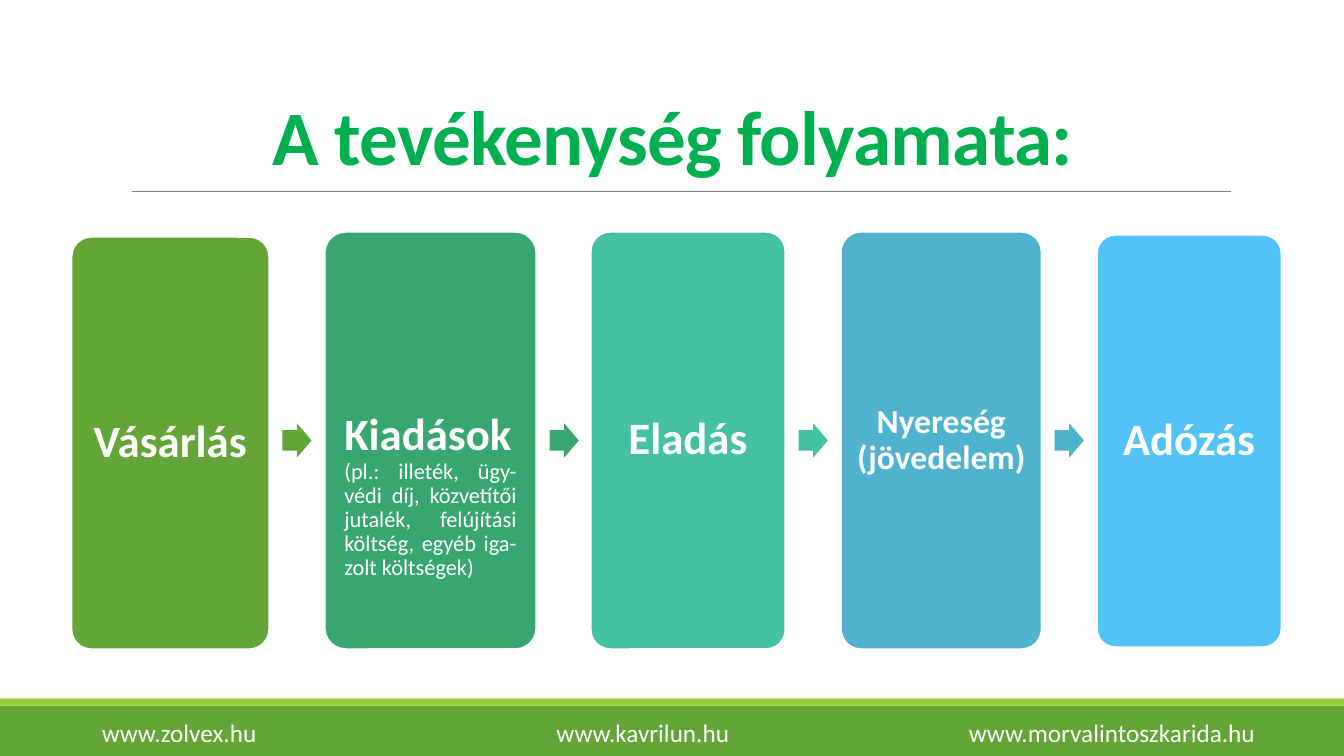
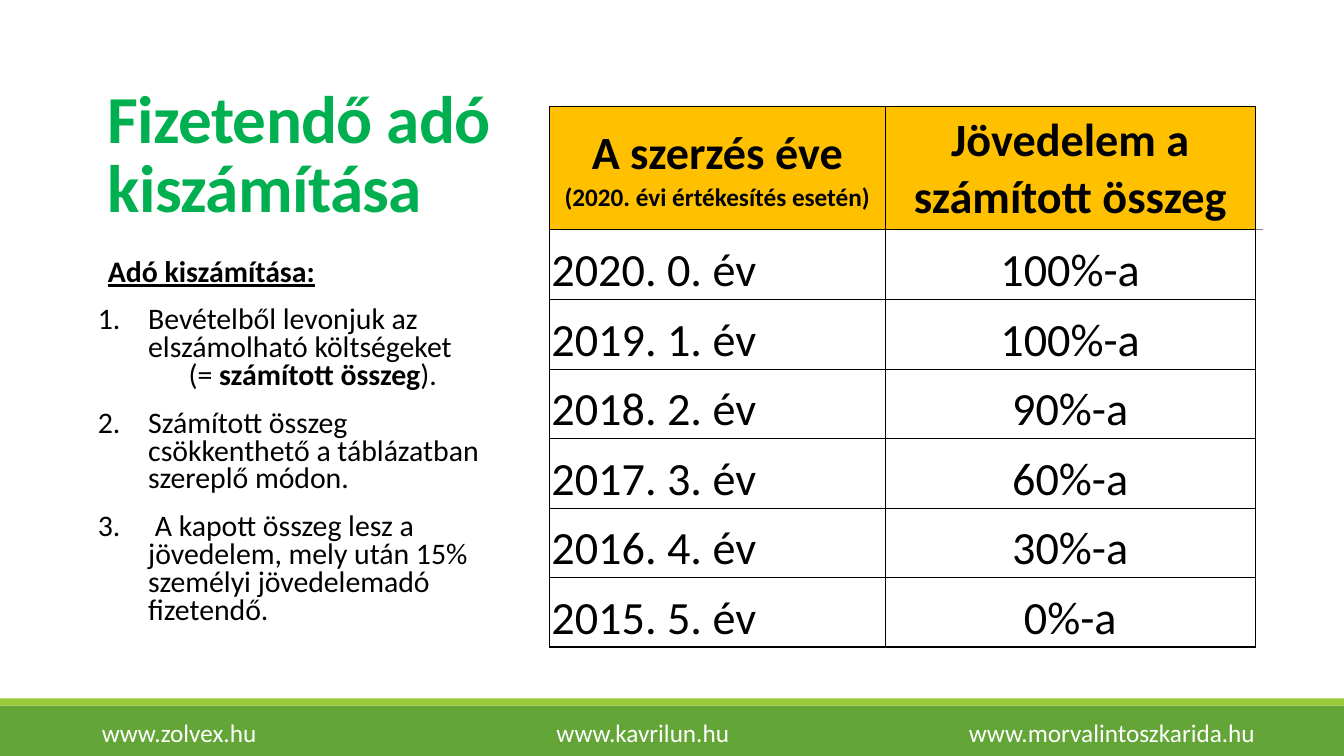
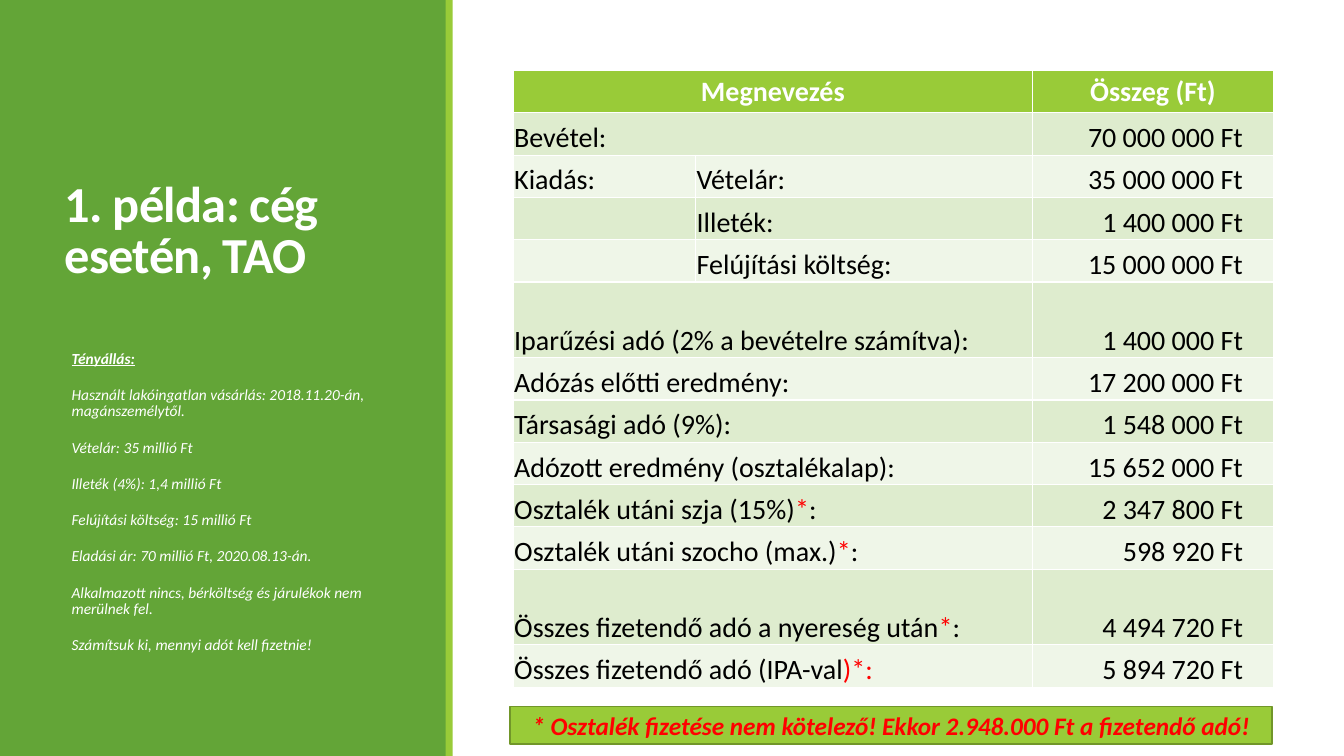
"""Build three slides on the taxation of property sales."""
from lxml import etree
from pptx import Presentation, util as u
from pptx.dml.color import RGBColor
from pptx.enum import shapes, text
from pptx.oxml import ns

GREEN, LIME, TITLE_GREEN, GREY = "63A537", "99CB38", "00B050", "808080"
WHITE, BLACK, RED, GOLD = "FFFFFF", "000000", "FF0000", "FFC000"
BANDS = ["DEECCE", "EFF6E8"]
RECT = shapes.MSO_SHAPE.RECTANGLE
LEFT, CENTER, RIGHT = text.PP_ALIGN.LEFT, text.PP_ALIGN.CENTER, text.PP_ALIGN.RIGHT
MIDDLE, BOTTOM = text.MSO_ANCHOR.MIDDLE, text.MSO_ANCHOR.BOTTOM


def block(page, kind, place, fill, line=None):
    """Add a flat preset shape at (left, top, width, height)."""
    box = page.shapes.add_shape(kind, *map(u.Inches, place))
    box.shadow.inherit = False
    box.fill.solid()
    box.fill.fore_color.rgb = RGBColor.from_string(fill)
    if line:
        box.line.color.rgb = RGBColor.from_string(line)
        box.line.width = u.Pt(1.25)
    else:
        box.line.fill.background()
    box.text_frame.word_wrap = True
    box.text_frame.vertical_anchor = MIDDLE
    return box


def write(para, words, size, colour=BLACK, bold=False, italic=False):
    """Append a formatted run to a paragraph."""
    span = para.add_run()
    span.text = words
    span.font.name = "Calibri"
    span.font.size = u.Pt(size)
    span.font.bold = bold
    span.font.italic = italic
    span.font.color.rgb = RGBColor.from_string(colour)
    return span


deck = Presentation()
deck.slide_width, deck.slide_height = u.Inches(13.33), u.Inches(7.5)

footer_bands = [((0, 7, 13.33, 0.5), GREEN), ((0, 6.93, 13.33, 0.07), LIME)]
side_bands = [((0, 0, 4.43, 7.5), GREEN), ((4.42, 0, 0.07, 7.5), LIME)]
outlines = [
    (5, "A tevékenység folyamata:", 55, TITLE_GREEN, CENTER,
     (1.17, 0.26, 11, 1.59), footer_bands, (1.31, 12.21, 1.9)),
    (1, "Fizetendő adó kiszámítása", 48, TITLE_GREEN, LEFT,
     (0.97, 0.7, 4.04, 1.59), footer_bands, (8.63, 12.53, 2.28)),
    (1, "1. példa: cég esetén, TAO", 36, WHITE, LEFT,
     (0.54, 0.57, 3.37, 2.3), side_bands, None),
]
addresses = "www.zolvex.hu\twww.kavrilun.hu\twww.morvalintoszkarida.hu"
for layout, heading, size, colour, align, place, bands, rule in outlines:
    page = deck.slides.add_slide(deck.slide_layouts[layout])
    for band, fill in bands:
        block(page, RECT, band, fill)
    if rule:
        start, end, height = map(u.Inches, rule)
        line = page.shapes.add_connector(shapes.MSO_CONNECTOR.STRAIGHT, start, height, end, height)
        line.line.color.rgb = RGBColor.from_string(GREY)
        line.line.width = u.Pt(0.5)
        etree.SubElement(line.element.spPr, ns.qn("a:effectLst"))
    if bands is footer_bands:
        footer = block(page, RECT, (0.5, 7.04, 12.53, 0.46), GREEN)
        footer.text_frame.margin_left = u.Inches(0.51)
        para = footer.text_frame.paragraphs[0]
        para.alignment = LEFT
        write(para, addresses, 18, WHITE)
        stops = etree.SubElement(para._p.get_or_add_pPr(), ns.qn("a:tabLst"))
        for stop in (4.51, 8.6):
            etree.SubElement(stops, ns.qn("a:tab"), pos=str(u.Inches(stop)), algn="l")
    for holder in list(page.placeholders):
        page.shapes.element.append(holder.element)
    title = page.shapes.title
    title.left, title.top, title.width, title.height = map(u.Inches, place)
    title.text_frame.auto_size = text.MSO_AUTO_SIZE.NONE
    title.text_frame.vertical_anchor = BOTTOM
    para = title.text_frame.paragraphs[0]
    para.alignment = align
    para.line_spacing = 0.85
    span = write(para, heading, size, colour, bold=True)
    span.font._element.set("spc", "-50")

process, rates, example = deck.slides

details = "(pl.: illeték, ügy- védi díj, közvetítői jutalék, felújítási költség, egyéb iga-zolt költségek)"
cards = [
    ("Vásárlás", 32, GREEN, (0.71, 2.35, 1.96, 4.09)),
    ("Kiadások", 32, "37A76F", (3.22, 2.3, 2.1, 4.14)),
    ("Eladás", 32, "44C1A3", (5.86, 2.3, 1.93, 4.14)),
    ("Nyereség (jövedelem)", 24, "4EB3CF", (8.34, 2.3, 1.99, 4.14)),
    ("Adózás", 32, "51C3F9", (10.88, 2.33, 1.83, 4.09)),
]
for label, size, fill, place in cards:
    card = block(process, shapes.MSO_SHAPE.ROUNDED_RECTANGLE, place, fill, WHITE)
    card.adjustments[0] = 0.1
    frame = card.text_frame
    frame.margin_left = frame.margin_right = u.Inches(size / 240)
    para = frame.paragraphs[0]
    para.alignment = CENTER
    para.line_spacing = 0.9
    write(para, label, size, WHITE, bold=True)
    if label == "Kiadások":
        frame.vertical_anchor = text.MSO_ANCHOR.TOP
        frame.margin_top = u.Inches(1.72)
        para.alignment = LEFT
        para = frame.add_paragraph()
        para.alignment = text.PP_ALIGN.JUSTIFY
        para.line_spacing = 0.9
        write(para, details, 16, WHITE)
    if label != "Adózás":
        arrow_left = place[0] + place[2] + 0.13
        arrow = block(process, shapes.MSO_SHAPE.RIGHT_ARROW, (arrow_left, 4.2, 0.29, 0.34), fill)
        arrow.adjustments[0] = 0.6

steps = [
    (None, 0.1, 12, 2, ["", "Adó kiszámítása:"]),
    (1, 0.5, 12, 0, ["Bevételből levonjuk az elszámolható költségeket"]),
    (None, 0.9, 0, 2, ["(= ", "számított összeg", ")."]),
    (2, 0.5, 12, 2, ["Számított összeg csökkenthető a táblázatban szereplő módon."]),
    (3, 0.5, 12, 2, [" A kapott összeg lesz a jövedelem, mely után 15% személyi jövedelemadó fizetendő."]),
]
facts = [
    "Tényállás:",
    "Használt lakóingatlan vásárlás: 2018.11.20-án, magánszemélytől.",
    "Vételár: 35 millió Ft",
    "Illeték (4%): 1,4 millió Ft",
    "Felújítási költség: 15 millió Ft",
    "Eladási ár: 70 millió Ft, 2020.08.13-án.",
    "Alkalmazott nincs, bérköltség és járulékok nem merülnek fel.",
    "Számítsuk ki, mennyi adót kell fizetnie!",
]
fact_items = [(None, 0, 12, 2, [fact]) for fact in facts]
lists = [
    (rates, (0.97, 2.53, 4.04, 3.9), steps, 21.3, BLACK, 0.78),
    (example, (0.71, 3.43, 3.37, 3.29), fact_items, 11, WHITE, 0.9),
]
for page, place, items, size, colour, spacing in lists:
    body = page.placeholders[1]
    body.left, body.top, body.width, body.height = map(u.Inches, place)
    frame = body.text_frame
    frame.auto_size = text.MSO_AUTO_SIZE.NONE
    frame.margin_left = frame.margin_right = 0
    for index, (number, indent, before, after, parts) in enumerate(items):
        para = frame.add_paragraph() if index else frame.paragraphs[0]
        para.line_spacing = spacing
        para.space_before, para.space_after = u.Pt(before), u.Pt(after)
        props = para._p.get_or_add_pPr()
        props.set("marL", str(u.Inches(indent)))
        props.set("indent", str(u.Inches(-indent if number else 0)))
        if number:
            etree.SubElement(props, ns.qn("a:buFont"), typeface="Calibri")
            etree.SubElement(props, ns.qn("a:buAutoNum"), type="arabicPeriod", startAt=str(number))
        else:
            etree.SubElement(props, ns.qn("a:buNone"))
        for order, words in enumerate(parts):
            if words:
                span = write(para, words, size, colour, bold=order == 1, italic=page is example)
                if index == 0:
                    span.font.bold = span.font.underline = True

rate_rows = [
    ("A szerzés éve", "Jövedelem a számított összeg"),
    ("2020. 0. év", "100%-a"),
    ("2019. 1. év", "100%-a"),
    ("2018. 2. év", "90%-a"),
    ("2017. 3. év", "60%-a"),
    ("2016. 4. év", "30%-a"),
    ("2015. 5. év", "0%-a"),
]
grid = rates.shapes.add_table(7, 2, *map(u.Inches, (5.45, 1.06, 7, 5.36))).table
grid.columns[0].width, grid.columns[1].width = u.Inches(3.33), u.Inches(3.67)
for row, values in enumerate(rate_rows):
    grid.rows[row].height = u.Inches(0.69 if row else 1.22)
    for column, value in enumerate(values):
        cell = grid.cell(row, column)
        cell.margin_left = cell.margin_right = cell.margin_top = u.Inches(0.02)
        cell.margin_bottom = 0
        cell.vertical_anchor = BOTTOM if row else MIDDLE
        cell.fill.solid()
        cell.fill.fore_color.rgb = RGBColor.from_string(WHITE if row else GOLD)
        para = cell.text_frame.paragraphs[0]
        para.alignment = LEFT if row and column == 0 else CENTER
        write(para, value, 33, bold=row == 0)
        outer = {"L": column == 0, "R": column == 1, "T": row == 0, "B": row == 6}
        for order, (side, edge) in enumerate(outer.items()):
            border = etree.Element(ns.qn("a:ln" + side), w=str(u.Pt(1 if edge else 0.5)))
            paint = etree.SubElement(border, ns.qn("a:solidFill"))
            etree.SubElement(paint, ns.qn("a:srgbClr"), val=BLACK)
            cell._tc.get_or_add_tcPr().insert(order, border)
para = grid.cell(0, 0).text_frame.add_paragraph()
para.alignment = CENTER
write(para, "(2020. évi értékesítés esetén)", 18, bold=True)

tax_rows = [
    ("Megnevezés", None, "Összeg (Ft)"),
    ("Bevétel:", None, "70 000 000 Ft"),
    ("Kiadás:", "Vételár:", "35 000 000 Ft"),
    ("", "Illeték:", "1 400 000 Ft"),
    ("", "Felújítási költség:", "15 000 000 Ft"),
    ("Iparűzési adó (2% a bevételre számítva):", None, "1 400 000 Ft"),
    ("Adózás előtti eredmény:", None, "17 200 000 Ft"),
    ("Társasági adó (9%):", None, "1 548 000 Ft"),
    ("Adózott eredmény (osztalékalap):", None, "15 652 000 Ft"),
    ("Osztalék utáni szja (15%)|*|:", None, "2 347 800 Ft"),
    ("Osztalék utáni szocho (max.)|*|:", None, "598 920 Ft"),
    ("Összes fizetendő adó a nyereség után|*|:", None, "4 494 720 Ft"),
    ("Összes fizetendő adó (IPA-val|)*:", None, "5 894 720 Ft"),
]
grid = example.shapes.add_table(13, 3, *map(u.Inches, (5.09, 0.7, 7.53, 6.1))).table
for column, width in zip(grid.columns, (1.81, 3.34, 2.39)):
    column.width = u.Inches(width)
for row, values in enumerate(tax_rows):
    grid.rows[row].height = u.Inches(0.75 if row in (5, 11) else 0.42)
    if values[1] is None:
        grid.cell(row, 0).merge(grid.cell(row, 1))
    for column, value in enumerate(values):
        cell = grid.cell(row, column)
        cell.margin_left = cell.margin_right = cell.margin_top = u.Inches(0.01)
        cell.margin_bottom = 0
        cell.vertical_anchor = BOTTOM if row else MIDDLE
        cell.fill.solid()
        cell.fill.fore_color.rgb = RGBColor.from_string(BANDS[(row - 1) % 2] if row else LIME)
        para = cell.text_frame.paragraphs[0]
        if row == 0:
            para.alignment = CENTER
        elif column == 2:
            para.alignment = RIGHT
            cell.margin_right = u.Inches(0.3)
        if value:
            for words, colour in zip(value.split("|"), (BLACK, RED, BLACK)):
                write(para, words, 20, colour if row else WHITE, bold=row == 0)

notice = block(example, RECT, (5.06, 7.01, 7.56, 0.37), LIME, "719629")
para = notice.text_frame.paragraphs[0]
para.alignment = CENTER
write(para, "* Osztalék fizetése nem kötelező! Ekkor 2.948.000 Ft a fizetendő adó!", 18, RED, True, True)

deck.save("out.pptx")
